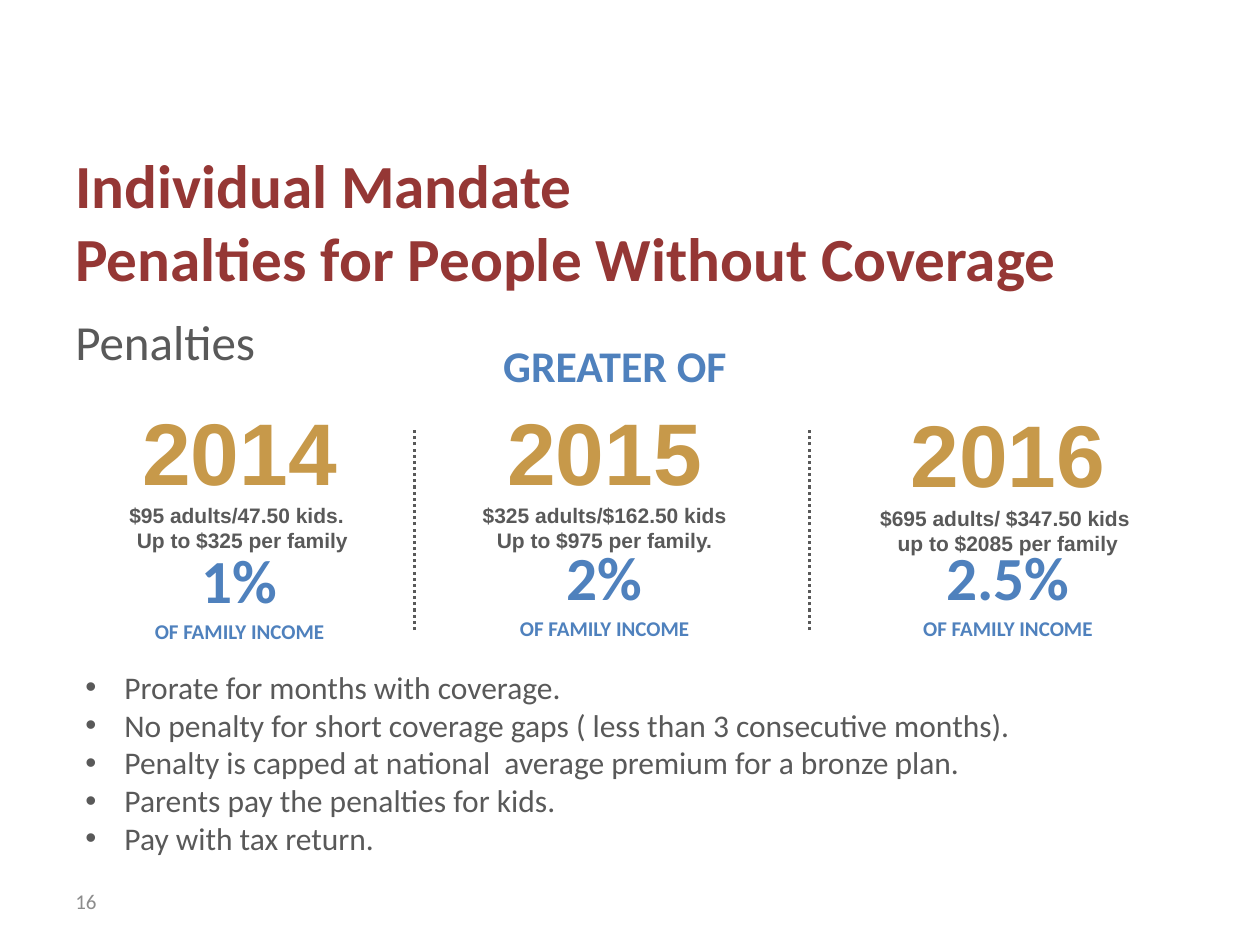
"""Build the slide on penalties for people without coverage."""
import copy

import lxml.etree
import pptx
import pptx.dml.color
import pptx.enum.dml
import pptx.enum.shapes
import pptx.enum.text
import pptx.oxml.ns
import pptx.util

Cm, Pt = pptx.util.Cm, pptx.util.Pt
RGBColor = pptx.dml.color.RGBColor
ALIGN = pptx.enum.text.PP_ALIGN
ANCHOR = pptx.enum.text.MSO_ANCHOR

RED = RGBColor(0x95, 0x37, 0x35)
GREY = RGBColor(0x59, 0x59, 0x59)
PALE = RGBColor(0x8C, 0x8C, 0x8C)
BLUE = RGBColor(0x4F, 0x81, 0xBD)
GOLD = RGBColor(0xC7, 0x99, 0x4A)

TITLE = {"name": "Calibri", "size": Pt(35), "bold": True, "color": RED}
HEAD = {"name": "Calibri", "size": Pt(28), "bold": False, "color": GREY}
BODY = {**HEAD, "size": Pt(18)}
PAGE = {**HEAD, "size": Pt(12), "color": PALE}
NOTE = {**TITLE, "size": Pt(25), "color": BLUE}
RATE = {**NOTE, "size": Pt(35)}
BASE = {**NOTE, "size": Pt(12)}
YEAR = {"name": "Arial", "size": Pt(50), "bold": True, "color": GOLD}
FINE = {**YEAR, "size": Pt(12), "color": GREY}

MID = {"alignment": ALIGN.CENTER}
TIGHT = {**MID, "line_spacing": Pt(19)}

COLS = [
    (0.64, 7.82, 11.61, "2014", ["$95 adults/47.50 kids. ", " Up to $325 per family"], "1%"),
    (8, 7.82, 11.56, "2015", ["$325 adults/$162.50 kids", " Up to $975 per family. "], "2%"),
    (16.13, 7.87, 11.56, "2016", ["$695 adults/ $347.50 kids ", "up to $2085 per family"], "2.5%"),
]
RULES = [
    "Prorate for months with coverage.",
    "No penalty for short coverage gaps ( less than 3 consecutive months).",
    "Penalty is capped at national  average premium for a bronze plan.",
    "Parents pay the penalties for kids.",
    "Pay with tax return.",
]


def style(font, form):
    """Apply a dict of format values to a font."""
    for key, val in form.items():
        if key == "color":
            font.color.rgb = val
        else:
            setattr(font, key, val)


def fill(para, lines, form=None):
    """Write (text, format) lines into a paragraph, with breaks between."""
    for key, val in (form or {}).items():
        setattr(para, key, val)
    for i, (text, font) in enumerate(lines):
        if i:
            para.add_line_break()
            para._p[-1].append(copy.deepcopy(run._r.rPr))
        run = para.add_run()
        run.text = text
        style(run.font, font)


def frame(slide, box, anchor=ANCHOR.TOP):
    """Add a wrapping text box and return its text frame."""
    text = slide.shapes.add_textbox(*map(Cm, box)).text_frame
    text.word_wrap = True
    text.vertical_anchor = anchor
    return text


def label(slide, box, lines, form=None, anchor=ANCHOR.TOP):
    """Add a box that holds one paragraph."""
    fill(frame(slide, box, anchor).paragraphs[0], lines, form)


def header(slide, x, y):
    """Place the title, the subhead and the note above the columns."""
    label(slide, (x, y, 21.39, 2.54),
          [("Individual Mandate", TITLE),
           ("Penalties for People Without Coverage", TITLE)],
          anchor=ANCHOR.MIDDLE)
    label(slide, (x, y + 2.97, 5.92, 1.47), [("Penalties", HEAD)])
    label(slide, (x + 0.43, y + 3.53, 21.39, 1.32), [("GREATER OF", NOTE)], MID)


def column(slide, x, y, low, year, fines, rate):
    """Place one year with its fines and its share of income."""
    wide = 8.38
    label(slide, (x, y, wide, 3.53),
          [(year, YEAR)] + [(fine, FINE) for fine in fines], MID, ANCHOR.MIDDLE)
    for text, font, size, drop in ((rate, RATE, 3.38, 0),
                                   ("OF FAMILY INCOME", BASE, 4.01, 0.57)):
        box = (x + (wide - size) / 2, low + drop, size, 1)
        label(slide, box, [(text, font)], TIGHT)


def divide(slide, x, y, high):
    """Draw a dotted upright line."""
    rule = slide.shapes.add_connector(
        pptx.enum.shapes.MSO_CONNECTOR.STRAIGHT, Cm(x), Cm(y + high), Cm(x), Cm(y))
    rule.line.color.rgb = GREY
    rule.line.width = Pt(1.75)
    rule.line.dash_style = pptx.enum.dml.MSO_LINE.ROUND_DOT
    lxml.etree.SubElement(rule._element.spPr, pptx.oxml.ns.qn("a:effectLst"))


def bullets(slide, box, items):
    """Place the bulleted list."""
    text = frame(slide, box)
    for i, item in enumerate(items):
        para = text.add_paragraph() if i else text.paragraphs[0]
        props = para._p.get_or_add_pPr()
        props.set("marL", str(Cm(0.79)))
        props.set("indent", str(-Cm(0.79)))
        for tag, key, val in (("a:buFont", "typeface", "Arial"),
                              ("a:buChar", "char", "•")):
            lxml.etree.SubElement(props, pptx.oxml.ns.qn(tag)).set(key, val)
        fill(para, [(item, BODY)])


def main():
    """Build and save the slide."""
    deck = pptx.Presentation()
    deck.slide_width, deck.slide_height = Cm(25.4), Cm(19.05)
    slide = deck.slides.add_slide(deck.slide_layouts[6])
    header(slide, 1.27, 3.18)
    for col in COLS:
        column(slide, *col)
    for x in (8.36, 16.31):
        divide(slide, x, 8.61, 4.09)
    bullets(slide, (1.47, 13.34, 19.89, 4.88), RULES)
    label(slide, (1.27, 17.65, 5.92, 1.02), [("16", PAGE)], anchor=ANCHOR.MIDDLE)
    deck.save("out.pptx")


if __name__ == "__main__":
    main()
